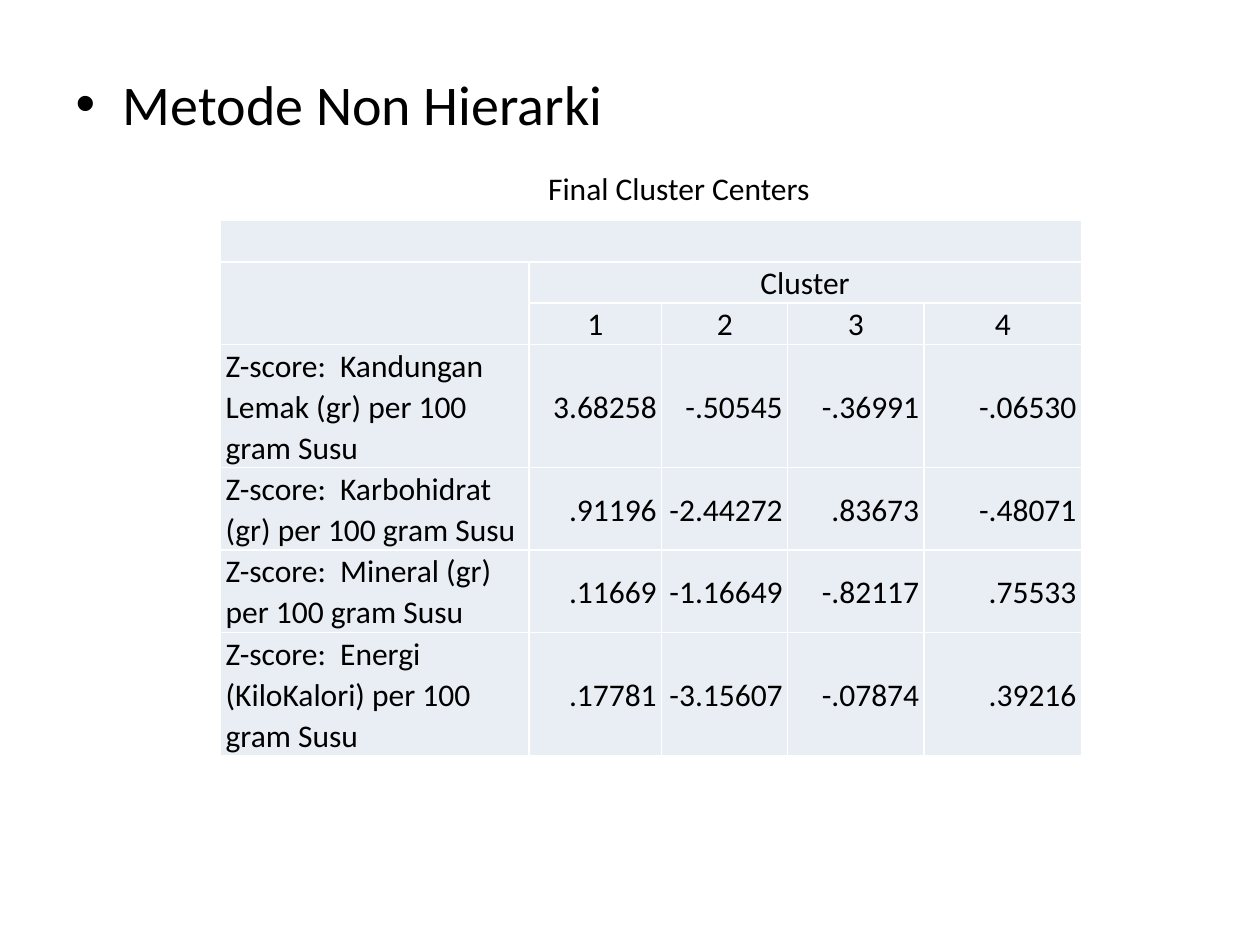
from lxml.etree import SubElement
from pptx import Presentation
from pptx.dml.color import RGBColor
from pptx.enum.text import MSO_ANCHOR, PP_ALIGN
from pptx.oxml.ns import qn
from pptx.util import Cm, Pt

COLORS = {"text": "000000", "cell": "E9EDF4", "rule": "FFFFFF"}
HEAD = "Metode Non Hierarki"
TITLE = "Final Cluster Centers"
# Text of each row with the number of lines it takes
ROWS = [
    (1, [""] * 5),
    (1, ["", "Cluster", "", "", ""]),
    (1, ["", "1", "2", "3", "4"]),
    (3, ["Z-score:  Kandungan Lemak (gr) per 100 gram Susu",
         "3.68258", "-.50545", "-.36991", "-.06530"]),
    (2, ["Z-score:  Karbohidrat (gr) per 100 gram Susu",
         ".91196", "-2.44272", ".83673", "-.48071"]),
    (2, ["Z-score:  Mineral (gr) per 100 gram Susu",
         ".11669", "-1.16649", "-.82117", ".75533"]),
    (3, ["Z-score:  Energi (KiloKalori) per 100 gram Susu",
         ".17781", "-3.15607", "-.07874", ".39216"]),
]
SPANS = [((0, 0), (0, 4)), ((1, 0), (2, 0)), ((1, 1), (1, 4))]
WIDTHS = [6.21, 2.68, 2.54, 2.75, 3.17]
LINE = 0.83
HEADS = 3  # rows above the values


def write(frame, text, size=18, align=PP_ALIGN.LEFT, space=None):
    para = frame.paragraphs[0]
    para.alignment = align
    para.line_spacing = space
    para.space_before = Pt(0)
    if text:
        para.text = text
    font = para.runs[0].font if text else para.font
    font.name = "Calibri"
    font.size = Pt(size)
    font.color.rgb = RGBColor.from_string(COLORS["text"])


def edge(cell):
    """Draw a thin rule on all four sides of a cell; call before the fill."""
    props = cell._tc.get_or_add_tcPr()
    for side in ("lnL", "lnR", "lnT", "lnB"):
        line = SubElement(props, qn(f"a:{side}"), w=str(Pt(1)))
        fill = SubElement(line, qn("a:solidFill"))
        SubElement(fill, qn("a:srgbClr"), val=COLORS["rule"])


def style(cell, text, row, col):
    cell.margin_top = cell.margin_bottom = 0
    cell.margin_left = cell.margin_right = Cm(0.1)
    align = PP_ALIGN.LEFT
    if row < HEADS:
        align = PP_ALIGN.CENTER
    else:
        cell.vertical_anchor = MSO_ANCHOR.MIDDLE
        if col:
            align = PP_ALIGN.RIGHT
    write(cell.text_frame, text, align=align, space=1.07)
    edge(cell)
    cell.fill.solid()
    cell.fill.fore_color.rgb = RGBColor.from_string(COLORS["cell"])


def main():
    deck = Presentation()
    deck.slide_width, deck.slide_height = Cm(25.4), Cm(19.05)
    slide = deck.slides.add_slide(deck.slide_layouts[1])
    title, body = slide.placeholders
    title.element.getparent().remove(title.element)

    body.left, body.top = Cm(1.27), Cm(1.27)
    body.width, body.height = Cm(22.86), Cm(15.75)
    write(body.text_frame, HEAD, size=32)

    high = LINE * sum(lines for lines, _ in ROWS)
    frame = slide.shapes.add_table(len(ROWS), len(WIDTHS), Cm(4.45), Cm(4.45),
                                   Cm(sum(WIDTHS)), Cm(high))
    table = frame.table
    table.first_row = table.horz_banding = False
    for col, width in zip(table.columns, WIDTHS):
        col.width = Cm(width)
    for r, (lines, texts) in enumerate(ROWS):
        table.rows[r].height = Cm(LINE * lines)
        for c, text in enumerate(texts):
            style(table.cell(r, c), text, r, c)
    for start, end in SPANS:
        table.cell(*start).merge(table.cell(*end))

    box = slide.shapes.add_textbox(Cm(10.8), Cm(3.28), Cm(6), Cm(1.02))
    box.text_frame.word_wrap = False
    write(box.text_frame, TITLE)
    deck.save("out.pptx")


if __name__ == "__main__":
    main()
